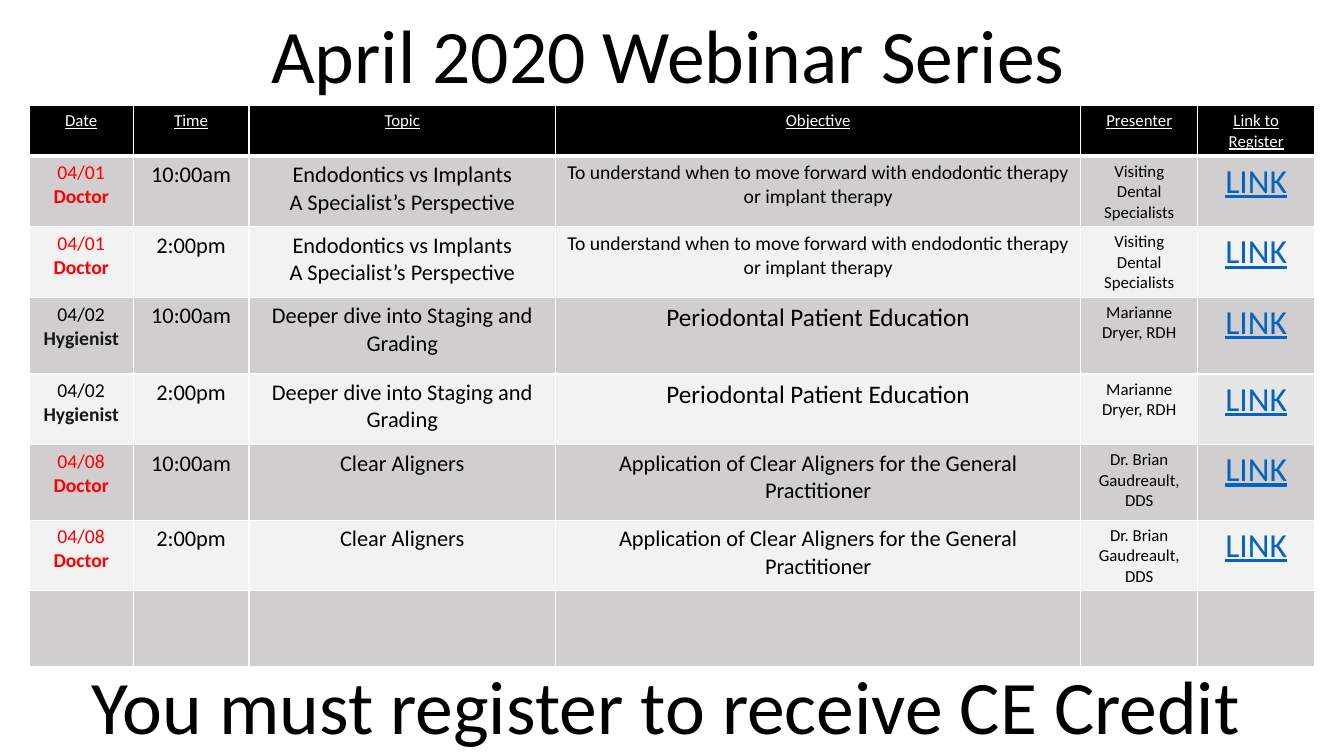
from pptx import Presentation
from pptx import util as u
from pptx.dml.color import RGBColor
from pptx.enum import text
from pptx.oxml import parse_xml
from pptx.oxml.ns import nsdecls

PX = 9144  # one px is a hundredth of an inch
FONT = "Calibri"
HUES = {
    "black": "000000", "white": "FFFFFF", "red": "FF0000", "ink": "181717",
    "link": "0563C1", "dark": "D0CECE", "light": "F2F2F2", "gray": "E7E6E6",
}
COLS = [103, 115, 304, 521, 116, 116]
ROWS = [47, 54, 53, 76, 70, 75, 54, 75]
HEADS = ["Date", "Time", "Topic", "Objective", "Presenter", "Link to Register"]
TIMES = ["10:00am", "2:00pm"]
# date, audience, date hue, audience hue, topic, objective, objective size, presenter
TALKS = [
    ("04/01", "Doctor", "red", "red",
     "Endodontics vs Implants\nA Specialist’s Perspective",
     "To understand when to move forward with endodontic therapy or implant therapy",
     14, "Visiting Dental Specialists"),
    ("04/02", "Hygienist", "black", "ink",
     "Deeper dive into Staging and Grading",
     "Periodontal Patient Education", 18, "Marianne Dryer, RDH"),
    ("04/08", "Doctor", "red", "red", "Clear Aligners",
     "Application of Clear Aligners for the General Practitioner",
     16, "Dr. Brian Gaudreault, DDS"),
]


def px(*nums):
    return [u.Emu(n * PX) for n in nums]


def rgb(hue):
    return RGBColor.from_string(HUES[hue])


def style(par, size, hue="black", bold=False, line=False):
    font = par.font
    font.name, font.size, font.bold = FONT, u.Pt(size), bold
    font.underline = line
    font.color.rgb = rgb(hue)


def banner(shape, words, box):
    """One large line of text, for the top and the foot."""
    shape.left, shape.top, shape.width, shape.height = px(*box)
    frame = shape.text_frame
    frame.text = words
    frame.word_wrap = False
    frame.auto_size = text.MSO_AUTO_SIZE.SHAPE_TO_FIT_TEXT
    frame.vertical_anchor = text.MSO_ANCHOR.TOP
    par = frame.paragraphs[0]
    par.alignment = text.PP_ALIGN.LEFT
    par.line_spacing = 1.0
    style(par, 54)


def paint(cell, hue, foot=1):
    """White borders, then the fill."""
    props = cell._tc.get_or_add_tcPr()
    for side, width in zip("LRTB", (1, 1, 1, foot)):
        props.append(parse_xml(
            f'<a:ln{side} {nsdecls("a")} w="{u.Pt(width)}"><a:solidFill>'
            f'<a:srgbClr val="{HUES["white"]}"/></a:solidFill></a:ln{side}>'))
    cell.fill.solid()
    cell.fill.fore_color.rgb = rgb(hue)


def write(cell, words, *look):
    cell.text_frame.text = words
    for par in cell.text_frame.paragraphs:
        par.alignment = text.PP_ALIGN.CENTER
        style(par, *look)


def agenda(slide, box):
    """Header, two sessions of each talk, and a spare row."""
    grid = slide.shapes.add_table(len(ROWS), len(COLS), *px(*box)).table
    for col, width in zip(grid.columns, px(*COLS)):
        col.width = width
    for row, height in zip(grid.rows, px(*ROWS)):
        row.height = height

    # Cell fills
    for r in range(len(ROWS)):
        for c in range(len(COLS)):
            hue = "black" if r == 0 else "dark" if r % 2 else "light"
            if (r, c) == (4, 5):
                hue = "gray"
            paint(grid.cell(r, c), hue, 1 if r else 3)

    # Header
    for c, head in enumerate(HEADS):
        write(grid.cell(0, c), head, 12, "white", False, True)

    # Sessions
    slots = [(talk, time) for talk in TALKS for time in TIMES]
    for r, (talk, time) in enumerate(slots, 1):
        date, who, hue, tone, topic, goal, size, host = talk
        day = grid.cell(r, 0)
        write(day, f"{date}\n{who}", 14, hue)
        style(day.text_frame.paragraphs[1], 14, tone, True)
        write(grid.cell(r, 1), time, 16)
        write(grid.cell(r, 2), topic, 16)
        write(grid.cell(r, 3), goal, size)
        write(grid.cell(r, 4), host, 12)
        write(grid.cell(r, 5), "LINK", 24, "link", False, True)


def main():
    deck = Presentation()
    deck.slide_width, deck.slide_height = px(1333, 750)
    slide = deck.slides.add_slide(deck.slide_layouts[5])
    agenda(slide, (29, 105, 1276, 556))
    banner(slide.shapes.title, "April 2020 Webinar Series", (259, 3, 816, 101))
    foot = slide.shapes.add_textbox(0, 0, 0, 0)
    banner(foot, "You must register to receive CE Credit", (81, 649, 1172, 101))
    deck.save("out.pptx")


if __name__ == "__main__":
    main()
